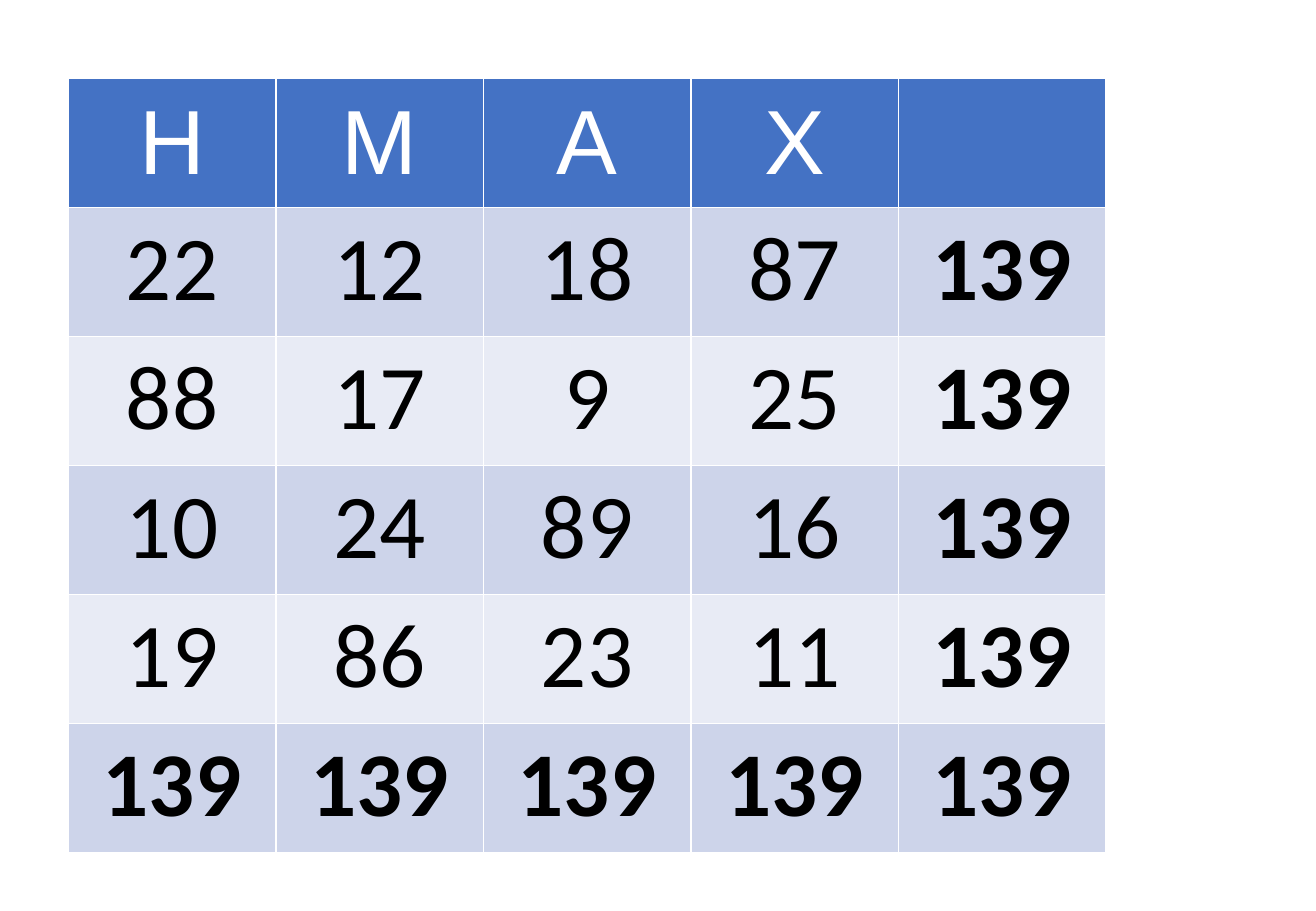
import pptx
import pptx.util
import pptx.dml.color
import pptx.enum.text

PX = 9525
COL_W, ROW_H = 164, 102
MARGIN_X, MARGIN_Y = 8, 5
HEADER, BANDS = "4472C4", ("CDD4EA", "E8EBF5")
LETTERS = ["Η", "Μ", "Α", "Χ", ""]
SQUARE = [
    [22, 12, 18, 87],
    [88, 17, 9, 25],
    [10, 24, 89, 16],
    [19, 86, 23, 11],
]


def rgb(value):
    return pptx.dml.color.RGBColor.from_string(value)


def write(cell, text, font="Calibri", size=54, color="000000", bold=False, anchor="TOP"):
    cell.vertical_anchor = pptx.enum.text.MSO_ANCHOR[anchor]
    cell.margin_left = cell.margin_right = MARGIN_X * PX
    cell.margin_top = cell.margin_bottom = MARGIN_Y * PX
    p = cell.text_frame.paragraphs[0]
    p.alignment = pptx.enum.text.PP_ALIGN.CENTER
    r = p.add_run()
    r.text = text
    r.font.name = font
    r.font.size = pptx.util.Pt(size)
    r.font.bold = bold
    r.font.color.rgb = rgb(color)


prs = pptx.Presentation()
prs.slide_width, prs.slide_height = 1040 * PX, 720 * PX
s = prs.slides.add_slide(prs.slide_layouts[6])

rows = [row + [sum(row)] for row in SQUARE]
rows.append([sum(column) for column in zip(*SQUARE)] + [sum(SQUARE[i][i] for i in range(4))])
n_rows, n_cols = len(rows) + 1, len(LETTERS)

table = s.shapes.add_table(
    n_rows, n_cols, 54 * PX, 62 * PX, n_cols * COL_W * PX, n_rows * ROW_H * PX
).table
for column in table.columns:
    column.width = COL_W * PX
for row in table.rows:
    row.height = ROW_H * PX

for j, letter in enumerate(LETTERS):
    cell = table.cell(0, j)
    cell.fill.solid()
    cell.fill.fore_color.rgb = rgb(HEADER)
    if letter:
        write(cell, letter, font="Arial", color="FFFFFF", anchor="MIDDLE")

for i, values in enumerate(rows):
    for j, value in enumerate(values):
        cell = table.cell(i + 1, j)
        cell.fill.solid()
        cell.fill.fore_color.rgb = rgb(BANDS[i % 2])
        write(cell, str(value), bold=i == len(SQUARE) or j == len(SQUARE))

prs.save("out.pptx")
